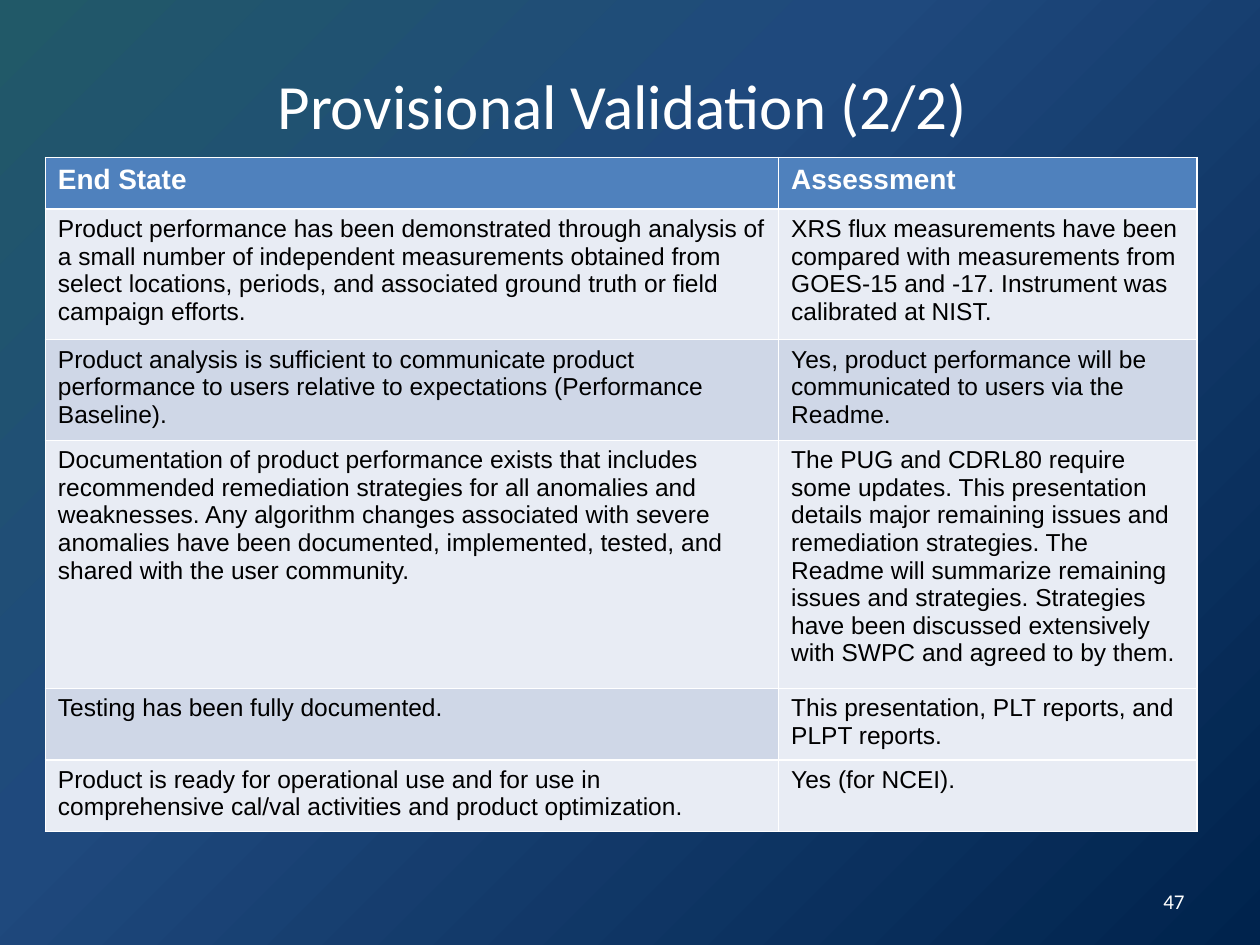
from copy import deepcopy

from pptx import Presentation
from pptx.dml.color import RGBColor
from pptx.enum.text import MSO_ANCHOR, PP_ALIGN
from pptx.oxml import parse_xml
from pptx.oxml.ns import nsdecls, qn
from pptx.util import Inches, Pt

CENTER, RIGHT = PP_ALIGN.CENTER, PP_ALIGN.RIGHT
MIDDLE = MSO_ANCHOR.MIDDLE

WHITE = RGBColor(0xFF, 0xFF, 0xFF)
BLACK = RGBColor(0x00, 0x00, 0x00)
HEADER_BLUE = RGBColor(0x4F, 0x81, 0xBD)
LIGHT_BAND = RGBColor(0xE8, 0xEC, 0xF4)
DARK_BAND = RGBColor(0xCF, 0xD7, 0xE7)
BACKGROUND_STOPS = [
    (0, RGBColor(0x21, 0x59, 0x68)),
    (0.4, RGBColor(0x1F, 0x49, 0x7D)),
    (1, RGBColor(0x00, 0x23, 0x4D)),
]

COLUMN_WIDTHS = [5.82, 3.32]
ROW_HEIGHTS = [0.41, 0.97, 0.76, 1.84, 0.54, 0.54]
ROWS = [
    ("End State", "Assessment"),
    ("Product performance has been demonstrated through analysis of a small number of "
     "independent measurements obtained from select locations, periods, and associated "
     "ground truth or field campaign efforts.",
     "XRS flux measurements have been compared with measurements from GOES-15 and -17. "
     "Instrument was calibrated at NIST."),
    ("Product analysis is sufficient to communicate product performance to users relative "
     "to expectations (Performance Baseline).",
     "Yes, product performance will be communicated to users via the Readme."),
    ("Documentation of product performance exists that includes recommended remediation "
     "strategies for all anomalies and weaknesses. Any algorithm changes associated with "
     "severe anomalies have been documented, implemented, tested, and shared with the user "
     "community.",
     "The PUG and CDRL80 require some updates. This presentation details major remaining "
     "issues and remediation strategies. The Readme will summarize remaining issues and "
     "strategies. Strategies have been discussed extensively with SWPC and agreed to by them."),
    ("Testing has been fully documented.",
     "This presentation, PLT reports, and PLPT reports."),
    ("Product is ready for operational use and for use in comprehensive cal/val activities "
     "and product optimization.",
     "Yes (for NCEI)."),
]
LAST_DARK_ASSESSMENT_ROW = 2


class SlideBuilder:
    heading_font = "Calibri"
    table_font = "Arial"

    def __init__(self, slide):
        self.slide = slide

    def background(self, stops):
        fill = self.slide.background.fill
        fill.gradient()
        fill.gradient_angle = 315
        stop_list = next(self.slide.element.iter(qn("a:gsLst")))
        while len(stop_list) < len(stops):
            stop_list.append(deepcopy(stop_list[-1]))
        for stop, (position, color) in zip(fill.gradient_stops, stops):
            stop.position = position
            stop.color.rgb = color

    def format_text(self, text_frame, font_name, size, color, bold=False):
        for paragraph in text_frame.paragraphs:
            for run in paragraph.runs:
                run.font.name = font_name
                run.font.size = Pt(size)
                run.font.bold = bold
                run.font.color.rgb = color

    def text(self, text, left, top, width, height, size, alignment):
        shape = self.slide.shapes.add_textbox(
            Inches(left), Inches(top), Inches(width), Inches(height))
        text_frame = shape.text_frame
        text_frame.word_wrap = True
        text_frame.vertical_anchor = MIDDLE
        text_frame.text = text
        text_frame.paragraphs[0].alignment = alignment
        self.format_text(text_frame, self.heading_font, size, WHITE)

    def cell_borders(self, cell, color, width):
        properties = cell._tc.get_or_add_tcPr()
        for index, side in enumerate(("lnL", "lnR", "lnT", "lnB")):
            properties.insert(index, parse_xml(
                f'<a:{side} {nsdecls("a")} w="{Pt(width)}"><a:solidFill>'
                f'<a:srgbClr val="{color}"/></a:solidFill></a:{side}>'))

    def table(self, rows, left, top, column_widths, row_heights):
        table = self.slide.shapes.add_table(
            len(rows), len(column_widths), Inches(left), Inches(top),
            Inches(sum(column_widths)), Inches(sum(row_heights))).table
        for column, width in zip(table.columns, column_widths):
            column.width = Inches(width)
        for row, height in zip(table.rows, row_heights):
            row.height = Inches(height)
        for row_index, texts in enumerate(rows):
            for column_index, text in enumerate(texts):
                cell = table.cell(row_index, column_index)
                cell.text = text
                cell.fill.solid()
                cell.fill.fore_color.rgb = self.cell_color(row_index, column_index)
                self.cell_borders(cell, WHITE, 1)
                if row_index == 0:
                    self.format_text(cell.text_frame, self.table_font, 16, WHITE, bold=True)
                else:
                    self.format_text(cell.text_frame, self.table_font, 14, BLACK)

    def cell_color(self, row_index, column_index):
        """Band the even rows; the assessments stay light after their last dark row."""
        if row_index == 0:
            return HEADER_BLUE
        is_light_assessment = column_index == 1 and row_index > LAST_DARK_ASSESSMENT_ROW
        return LIGHT_BAND if row_index % 2 or is_light_assessment else DARK_BAND


def main():
    presentation = Presentation()
    presentation.slide_width = Inches(10)
    presentation.slide_height = Inches(7.5)
    builder = SlideBuilder(presentation.slides.add_slide(presentation.slide_layouts[6]))

    builder.background(BACKGROUND_STOPS)
    builder.text("Provisional Validation (2/2)", 0.44, 0.26, 9, 1.13, 36, CENTER)
    builder.text("47", 7.17, 6.95, 2.33, 0.4, 12, RIGHT)
    builder.table(ROWS, 0.36, 1.25, COLUMN_WIDTHS, ROW_HEIGHTS)
    presentation.save("out.pptx")


if __name__ == "__main__":
    main()
